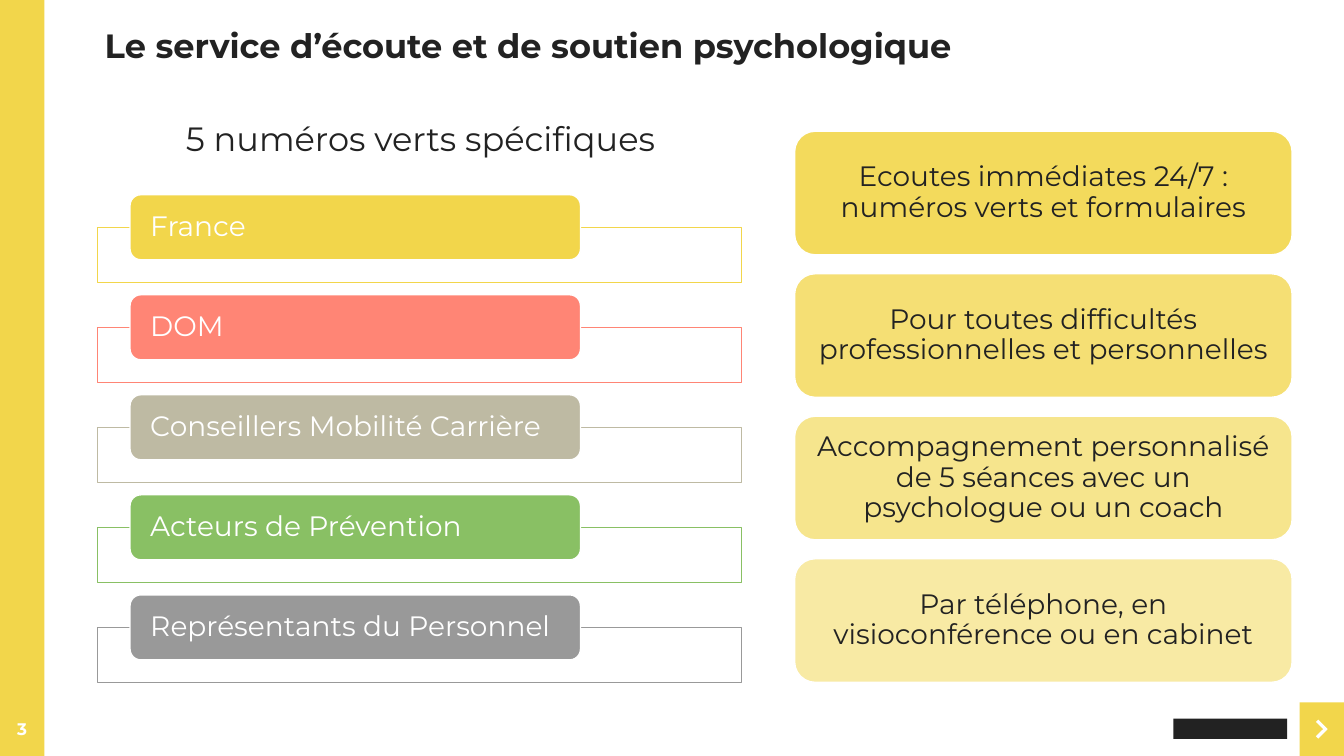
import pptx
import pptx.util
import pptx.dml.color
import pptx.enum.shapes
import pptx.enum.text
import pptx.oxml.ns
import lxml.etree

Pt = pptx.util.Pt
RGB = pptx.dml.color.RGBColor
Kind = pptx.enum.shapes.MSO_SHAPE
Align = pptx.enum.text.PP_ALIGN
Anchor = pptx.enum.text.MSO_ANCHOR

YELLOW = RGB(0xF2, 0xD6, 0x4B)
CORAL = RGB(0xFF, 0x85, 0x75)
SAND = RGB(0xBE, 0xBA, 0xA3)
GREEN = RGB(0x89, 0xC0, 0x64)
GREY = RGB(0x99, 0x99, 0x99)
WHITE = RGB(0xFF, 0xFF, 0xFF)
INK = RGB(0x22, 0x22, 0x22)

LINES = [
    ("France", YELLOW),
    ("DOM", CORAL),
    ("Conseillers Mobilité Carrière", SAND),
    ("Acteurs de Prévention", GREEN),
    ("Représentants du Personnel", GREY),
]
CARDS = [
    ("Ecoutes immédiates 24/7 : numéros verts et formulaires", 90),
    ("Pour toutes difficultés professionnelles et personnelles", 77),
    ("Accompagnement personnalisé de 5 séances avec un psychologue ou un coach", 63),
    ("Par téléphone, en visioconférence ou en cabinet", 50),
]


class Board:
    face = "Montserrat"

    def __init__(self, slide):
        self.slide = slide

    def paint(self, shape, fill, line=None, alpha=100):
        shape.shadow.inherit = False
        shape.fill.solid()
        shape.fill.fore_color.rgb = fill
        if alpha < 100:
            props = shape.element.spPr
            tint = props.find(".//" + pptx.oxml.ns.qn("a:srgbClr"))
            node = lxml.etree.SubElement(tint, pptx.oxml.ns.qn("a:alpha"))
            node.set("val", str(alpha * 1000))
        if line is None:
            shape.line.fill.background()
        else:
            shape.line.color.rgb = line
            shape.line.width = Pt(1)

    def block(self, kind, place, fill, line=None, alpha=100):
        shape = self.slide.shapes.add_shape(kind, *map(Pt, place))
        self.paint(shape, fill, line, alpha)
        return shape

    def outline(self, points, fill):
        first, *rest = [(Pt(x), Pt(y)) for x, y in points]
        pen = self.slide.shapes.build_freeform(*first, scale=1.0)
        pen.add_line_segments(rest)
        self.paint(pen.convert_to_shape(), fill)

    def letter(self, shape, text, size, color, align=Align.LEFT, bold=False,
               anchor=Anchor.MIDDLE, pads=(7.2, 3.6), space=1.0, wrap=True):
        frame = shape.text_frame
        frame.word_wrap = wrap
        frame.vertical_anchor = anchor
        frame.margin_left = frame.margin_right = Pt(pads[0])
        frame.margin_top = frame.margin_bottom = Pt(pads[1])
        para = frame.paragraphs[0]
        para.text = text
        para.alignment = align
        para.line_spacing = space
        para.font.name = self.face
        para.font.size = Pt(size)
        para.font.bold = bold
        para.font.color.rgb = color

    def label(self, place, *args, **style):
        box = self.slide.shapes.add_textbox(*map(Pt, place))
        self.letter(box, *args, **style)


def main():
    deck = pptx.Presentation()
    deck.slide_width, deck.slide_height = Pt(960), Pt(540)
    board = Board(deck.slides.add_slide(deck.slide_layouts[6]))

    board.block(Kind.RECTANGLE, (0, 0, 31.7, 540), YELLOW)
    board.block(Kind.RECTANGLE, (928.3, 501.8, 31.7, 38.2), YELLOW)
    board.outline([(940, 515.7), (945.2, 520.8), (940, 525.9),
                   (941.7, 527.6), (948.4, 520.8), (941.7, 514)], WHITE)
    board.block(Kind.RECTANGLE, (838.1, 513.4, 81.4, 14.4), INK)
    board.label((67.7, 14.4, 823.7, 36),
                "Le service d’écoute et de soutien psychologique",
                24, INK, bold=True, anchor=Anchor.TOP)
    board.label((0, 506.2, 31.7, 28.8), "3", 12, WHITE,
                align=Align.CENTER, bold=True, wrap=False)
    board.label((54, 80.6, 492.5, 36), "5 numéros verts spécifiques",
                24, INK, align=Align.CENTER, anchor=Anchor.TOP)

    for i, (text, color) in enumerate(LINES):
        top = 139.1 + i * 71.45
        board.block(Kind.RECTANGLE, (69.8, top + 23.2, 460.1, 39.6),
                    WHITE, color, 90)
        tab = board.block(Kind.ROUNDED_RECTANGLE, (92.9, top, 321.8, 46.5),
                          color, WHITE)
        board.letter(tab, text, 20, WHITE, pads=(12.2, 0), space=0.9)

    for i, (text, alpha) in enumerate(CARDS):
        card = board.block(Kind.ROUNDED_RECTANGLE,
                           (567.6, 93.7 + i * 101.8, 355.4, 88.3),
                           YELLOW, WHITE, alpha)
        board.letter(card, text, 20, INK, align=Align.CENTER,
                     pads=(5.8, 5.8), space=0.9)

    deck.save("out.pptx")


if __name__ == "__main__":
    main()
